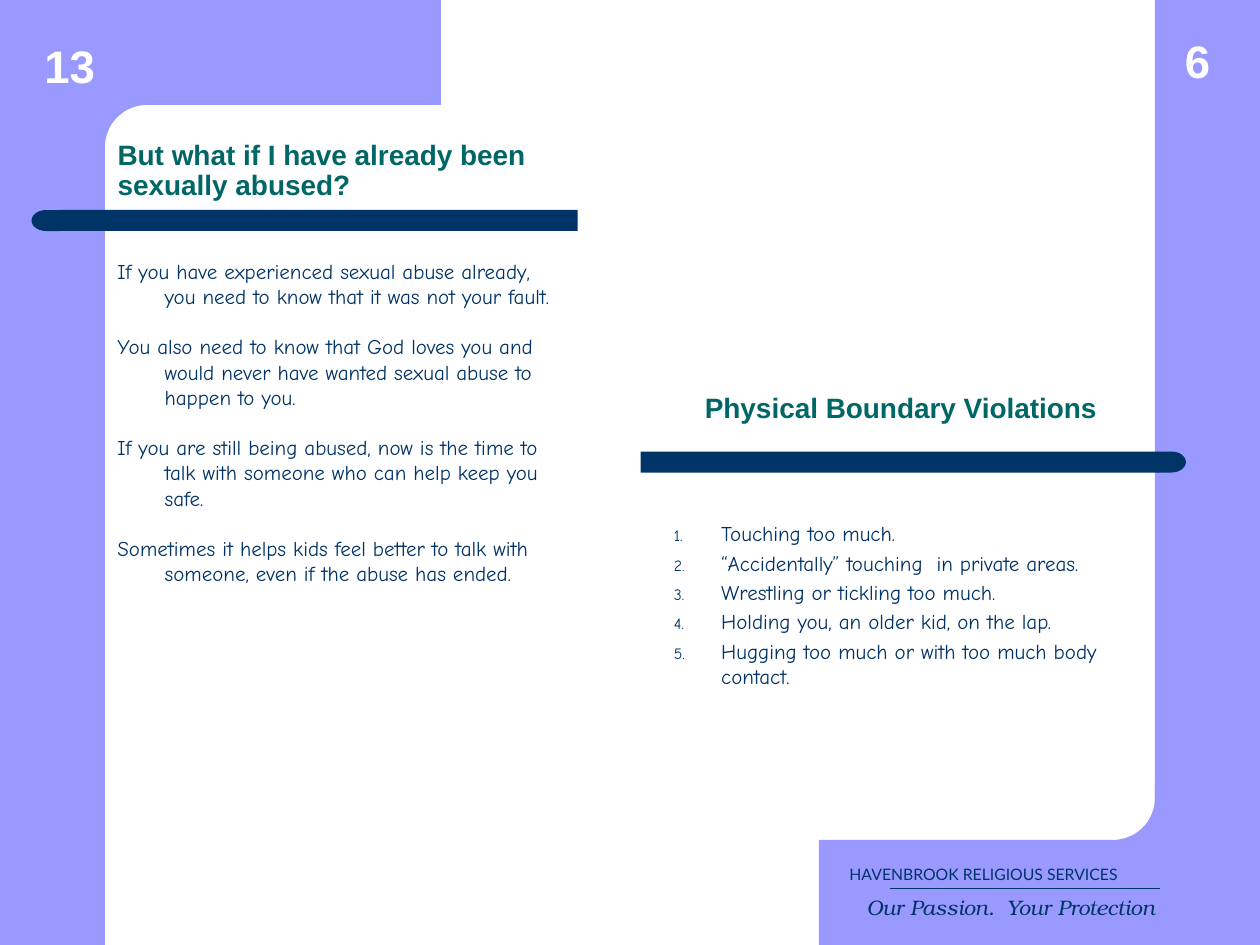
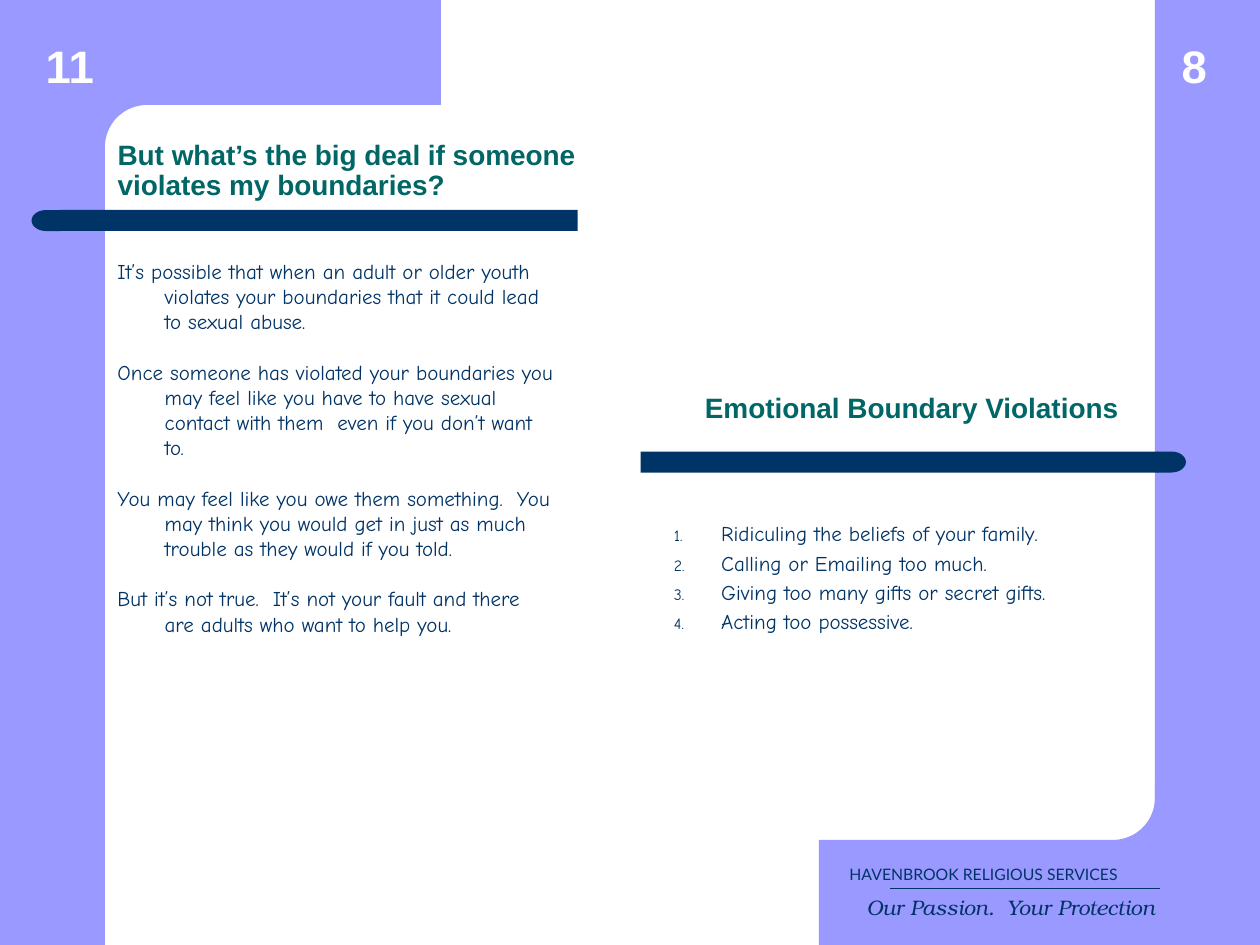
from dataclasses import dataclass
from math import cos, pi, sin

from lxml.etree import SubElement
from pptx import Presentation
from pptx.dml.color import RGBColor as RGB
from pptx.enum.shapes import MSO_CONNECTOR as LINE, MSO_SHAPE as SHAPE
from pptx.enum.text import MSO_ANCHOR as ANCHOR, PP_ALIGN as ALIGN
from pptx.oxml.ns import qn
from pptx.util import Emu, Inches, Pt

COLUMNS, ROWS = 120, 90
CELL = Inches(10) / COLUMNS


@dataclass(frozen=True)
class Theme:
    lilac = RGB(0x99, 0x99, 0xFF)
    navy = RGB(0x00, 0x33, 0x66)
    teal = RGB(0x00, 0x66, 0x66)
    white = RGB(0xFF, 0xFF, 0xFF)
    number = dict(font="Arial", size=26, color=white, bold=True,
                  align=ALIGN.CENTER, anchor=ANCHOR.BOTTOM)
    heading = dict(font="Arial", size=16, color=teal, bold=True,
                   line_spacing=0.9, anchor=ANCHOR.BOTTOM)
    body = dict(font="Comic Neue", size=12, color=navy, hanging=4.5)
    story = dict(body, gap=14.4, margins=(1.2, 2.6, 1.2, 0.6))
    steps = dict(body, gap=2.4, numbered=True)
    company = dict(font="Lato", size=9, color=navy, anchor=ANCHOR.MIDDLE,
                   margins=(10.8, 0.6, 1.2, 0.6))
    motto = dict(font="TeX Gyre Bonum", size=12, color=navy, italic=True,
                 align=ALIGN.RIGHT)


def cells(*lengths):
    return [Emu(round(length * CELL)) for length in lengths]


def number_paragraph(paragraph, color):
    properties = paragraph._p.get_or_add_pPr()
    bullet_color = SubElement(properties, qn("a:buClr"))
    SubElement(bullet_color, qn("a:srgbClr"), val=str(color))
    SubElement(properties, qn("a:buSzPct"), val="75000")
    SubElement(properties, qn("a:buAutoNum"), type="arabicPeriod")


def write(shape, *paragraphs, font, size, color, bold=False, italic=False,
          align=ALIGN.LEFT, anchor=ANCHOR.TOP, line_spacing=None, gap=0,
          hanging=0, numbered=False, margins=(1.2, 0.6, 1.2, 0.6)):
    """Fill a shape with text; margins and hanging are in cells, gap in points."""
    frame = shape.text_frame
    frame.word_wrap = True
    frame.vertical_anchor = anchor
    (frame.margin_left, frame.margin_top,
     frame.margin_right, frame.margin_bottom) = cells(*margins)
    for index, words in enumerate(paragraphs):
        paragraph = frame.paragraphs[0] if index == 0 else frame.add_paragraph()
        paragraph.text = words
        paragraph.alignment = align
        if hanging:
            indent, = cells(hanging)
            properties = paragraph._p.get_or_add_pPr()
            properties.set("marL", str(indent))
            properties.set("indent", str(-indent))
        if numbered:
            number_paragraph(paragraph, color)
        if line_spacing:
            paragraph.line_spacing = line_spacing
        if gap and index:
            paragraph.space_before = Pt(gap)
        letters = paragraph.font
        letters.name, letters.size = font, Pt(size)
        letters.bold, letters.italic = bold, italic
        letters.color.rgb = color


class Booklet:
    """Draws spreads of two facing pages on a grid of 120 by 90 cells."""

    def __init__(self, theme):
        self.theme = theme
        self.deck = Presentation()
        self.deck.slide_width, self.deck.slide_height = cells(COLUMNS, ROWS)
        self.shapes = None

    def new_spread(self):
        slide = self.deck.slides.add_slide(self.deck.slide_layouts[6])
        self.shapes = slide.shapes

    def paint(self, shape, color):
        shape.shadow.inherit = False
        shape.line.fill.background()
        if color is None:
            shape.fill.background()
        else:
            shape.fill.solid()
            shape.fill.fore_color.rgb = color
        return shape

    def block(self, kind, box, color=None, rounding=None):
        shape = self.shapes.add_shape(kind, *cells(*box))
        if rounding is not None:
            shape.adjustments[0] = rounding
        return self.paint(shape, color)

    def outline(self, points, color):
        start, *others = [cells(*point) for point in points]
        builder = self.shapes.build_freeform(*start, scale=1.0)
        builder.add_line_segments(others, close=True)
        return self.paint(builder.convert_to_shape(), color)

    def text(self, box, *paragraphs, **style):
        write(self.shapes.add_textbox(*cells(*box)), *paragraphs, **style)

    def heading(self, box, words, **changes):
        panel = self.block(SHAPE.ROUNDED_RECTANGLE, box, rounding=0.217)
        write(panel, words, **{**self.theme.heading, **changes})

    def rule(self, left, right, top):
        line = self.shapes.add_connector(
            LINE.STRAIGHT, *cells(left, top, right, top))
        line.line.color.rgb = self.theme.navy
        line.line.width = Pt(0.75)
        SubElement(line._element.spPr, qn("a:effectLst"))

    def page_edge(self, turned):
        """Side strip with its corner tab; turned swings both half a turn."""
        strip_left = COLUMNS - 10 if turned else 0
        self.block(SHAPE.RECTANGLE, (strip_left, 0, 10, ROWS), self.theme.lilac)
        angles = [pi / 2 * step / 16 for step in range(17)]
        fillet = [(14 - 4 * sin(a), 14 - 4 * cos(a)) for a in angles]
        tab = [(42, 0), (42, 10), *fillet, (10, 15.4), (6, 15.4), (6, 0)]
        if turned:
            tab = [(COLUMNS - x, ROWS - y) for x, y in tab]
        self.outline(tab, self.theme.lilac)

    def bar(self, left, top, cap_left, cap_turn):
        self.block(SHAPE.ROUNDED_RECTANGLE, (left, top, 49.3, 2),
                   self.theme.navy, rounding=0)
        cap = self.block(SHAPE.FLOWCHART_DELAY, (cap_left, top, 2.75, 2),
                         self.theme.navy)
        cap.rotation = cap_turn

    def frame(self):
        self.page_edge(turned=False)
        self.bar(5.7, 20, 3, 180)
        self.page_edge(turned=True)
        self.bar(61, 43, 110.2, 0)
        self.text((70.1, 80.9, 41.4, 4.7), "HAVENBROOK RELIGIOUS SERVICES",
                  **self.theme.company)
        self.rule(84.8, 110.5, 84.6)
        self.text((78.6, 84.6, 32.6, 3.6), "Our Passion.  Your Protection",
                  **self.theme.motto)

    def right_page(self, number, title, steps, height, number_at):
        self.heading((65, 27, 44, 15), title)
        self.text((63, 49, 44, height), *steps, **self.theme.steps)
        self.text((*number_at, 7.7, 6.4), number, **self.theme.number)

    def left_page(self, number, title, story, width):
        # Narrow margins make up for the inset of the rounded corners.
        self.heading((10, 8, 48, 12), title, margins=(0.44, 0, 0.44, 0))
        self.text((10, 22, width, 64), *story, **self.theme.story)
        self.text((2.8, 3, 7.7, 6.4), number, **self.theme.number)


SPREADS = [
    dict(
        right=dict(
            number="6", number_at=(110.2, 2.5), height=31,
            title="Physical Boundary Violations",
            steps=[
                "Touching too much.",
                "“Accidentally” touching  in private areas.",
                "Wrestling or tickling too much.",
                "Holding you, an older kid, on the lap.",
                "Hugging too much or with too much body contact.",
            ]),
        left=dict(
            number="13", width=45,
            title="But what if I have already been sexually abused?",
            story=[
                "If you have experienced sexual abuse already, you need to "
                "know that it was not your fault.",
                "You also need to know that God loves you and would never "
                "have wanted sexual abuse to happen to you.",
                "If you are still being abused, now is the time to talk with "
                "someone who can help keep you safe.",
                "Sometimes it helps kids feel better to talk with someone, "
                "even if the abuse has ended.",
            ])),
    dict(
        right=dict(
            number="8", number_at=(109.9, 3), height=20,
            title="Emotional Boundary Violations",
            steps=[
                "Ridiculing the beliefs of your family.",
                "Calling or Emailing too much.",
                "Giving too many gifts or secret gifts.",
                "Acting too possessive.",
            ]),
        left=dict(
            number="11", width=44,
            title="But what’s the big deal if someone violates my boundaries?",
            story=[
                "It’s possible that when an adult or older youth violates "
                "your boundaries that it could lead to sexual abuse.",
                "Once someone has violated your boundaries you may feel like "
                "you have to have sexual contact with them  even if you "
                "don’t want to.",
                "You may feel like you owe them something.  You may think "
                "you would get in just as much trouble as they would if you "
                "told.",
                "But it’s not true.  It’s not your fault and there are "
                "adults who want to help you.",
            ])),
]


def main():
    booklet = Booklet(Theme())
    for spread in SPREADS:
        booklet.new_spread()
        booklet.frame()
        booklet.right_page(**spread["right"])
        booklet.left_page(**spread["left"])
    booklet.deck.save("out.pptx")


if __name__ == "__main__":
    main()
